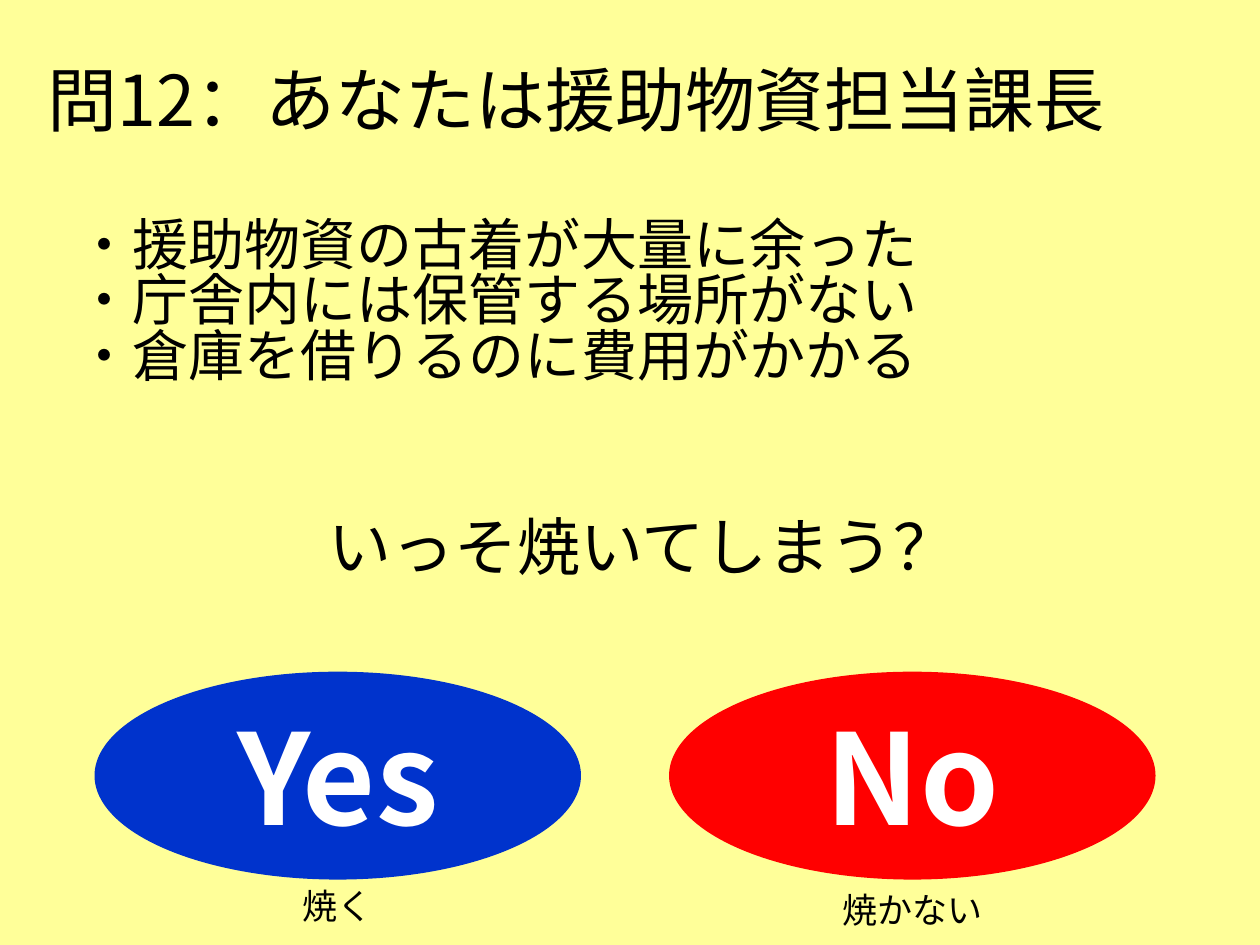
from lxml import etree
from pptx import Presentation
from pptx import util as u
from pptx.dml.color import RGBColor
from pptx.enum import shapes, text
from pptx.oxml.ns import qn

# Content
TITLE = "問12：あなたは援助物資担当課長"
FACTS = [
    "援助物資の古着が大量に余った",
    "庁舎内には保管する場所がない",
    "倉庫を借りるのに費用がかかる",
]
QUESTION = "いっそ焼いてしまう？"
# answer, colour, meaning, top of the meaning
ANSWERS = [("Yes", "yes", "焼く", 500.4), ("No", "no", "焼かない", 502.6)]

# Style and layout, in points
FONT = "Noto Sans CJK JP"
COLORS = {"background": "FFFF99", "ink": "000000", "yes": "0033CC",
          "no": "FF0000", "answer": "FFFFFF"}
ANSWER_LEFT, ANSWER_TOP, ANSWER_STEP = 54, 383.8, 328.3
ANSWER_WIDTH, ANSWER_HEIGHT = 278, 118.8
MEANING_WIDTH, MEANING_HEIGHT = 273.6, 34.6


def color(name):
    return RGBColor.from_string(COLORS[name])


def place(shape, left, top, width, height):
    shape.left, shape.top = u.Pt(left), u.Pt(top)
    shape.width, shape.height = u.Pt(width), u.Pt(height)


def write(shape, lines, size, ink="ink", bold=False, align=text.PP_ALIGN.CENTER,
          anchor=text.MSO_ANCHOR.MIDDLE, spacing=None):
    frame = shape.text_frame
    frame.text = "\n".join(lines)
    frame.word_wrap = True
    frame.auto_size = text.MSO_AUTO_SIZE.NONE
    frame.vertical_anchor = anchor
    for paragraph in frame.paragraphs:
        paragraph.alignment = align
        paragraph.space_before = u.Pt(0)
        paragraph.line_spacing = spacing
        font = paragraph.font
        font.name, font.size, font.bold = FONT, u.Pt(size), bold
        font.color.rgb = color(ink)
        # East Asian typeface
        properties = paragraph._p.pPr.find(qn("a:defRPr"))
        etree.SubElement(properties, qn("a:ea"), typeface=FONT)


def add_label(slide, line, size, *box):
    label = slide.shapes.add_textbox(*map(u.Pt, box))
    write(label, [line], size)


def main():
    presentation = Presentation()
    presentation.slide_width, presentation.slide_height = u.Pt(720), u.Pt(540)
    slide = presentation.slides.add_slide(presentation.slide_layouts[1])
    slide.background.fill.solid()
    slide.background.fill.fore_color.rgb = color("background")

    # Title
    title = slide.shapes.title
    place(title, 20.2, 28.1, 686.2, 56.9)
    write(title, [TITLE], 40, align=text.PP_ALIGN.LEFT)

    # Facts, marked with a typed middle dot
    body = slide.placeholders[1]
    place(body, 36.7, 122.4, 646.6, 157.7)
    write(body, ["・" + fact for fact in FACTS], 32, align=text.PP_ALIGN.LEFT,
          anchor=text.MSO_ANCHOR.TOP, spacing=0.83)
    for paragraph in body.text_frame.paragraphs:
        properties = paragraph._p.pPr
        properties.set("marL", "0")
        properties.set("indent", "0")
        no_bullet = etree.Element(qn("a:buNone"))
        properties.find(qn("a:defRPr")).addprevious(no_bullet)

    # Question
    add_label(slide, QUESTION, 36, 144.7, 283, 445, 57.6)

    # Answers with their meanings centred below
    for index, (answer, fill, meaning, meaning_top) in enumerate(ANSWERS):
        left = ANSWER_LEFT + index * ANSWER_STEP
        ellipse = slide.shapes.add_shape(
            shapes.MSO_SHAPE.OVAL,
            *map(u.Pt, (left, ANSWER_TOP, ANSWER_WIDTH, ANSWER_HEIGHT)))
        ellipse.shadow.inherit = False
        ellipse.fill.solid()
        ellipse.fill.fore_color.rgb = color(fill)
        ellipse.line.fill.background()
        write(ellipse, [answer], 72, ink="answer", bold=True)
        add_label(slide, meaning, 20, left + (ANSWER_WIDTH - MEANING_WIDTH) / 2,
                  meaning_top, MEANING_WIDTH, MEANING_HEIGHT)

    presentation.save("out.pptx")


if __name__ == "__main__":
    main()
